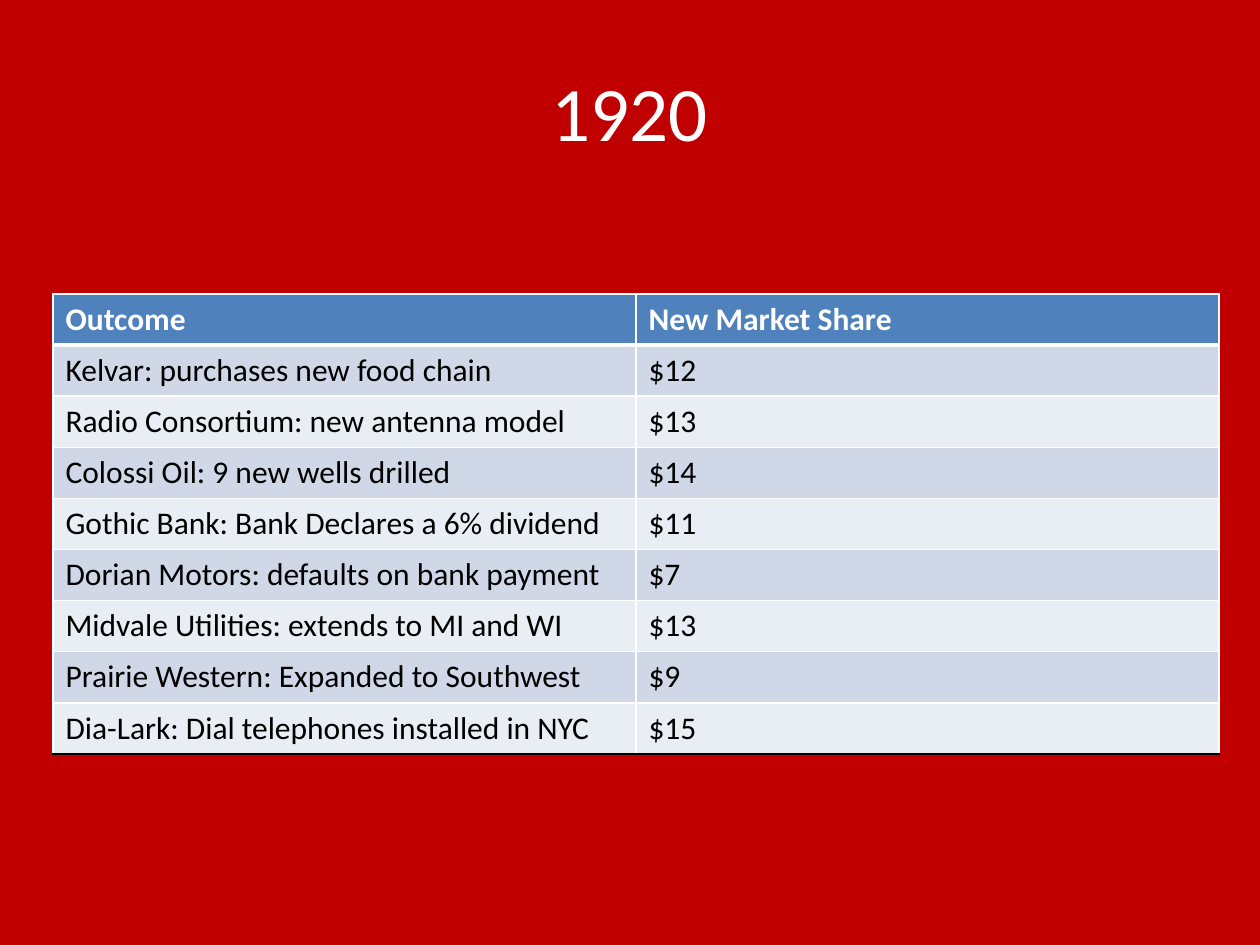
from dataclasses import dataclass
from typing import NamedTuple

from lxml import etree
from pptx import Presentation
from pptx import util as u
from pptx.dml.color import RGBColor
from pptx.enum import text
from pptx.oxml import ns

PX_PER_INCH = 126


@dataclass(frozen=True)
class Theme:
    font: str = "Calibri"
    title_size: int = 44
    table_size: int = 18
    background: str = "C00000"
    light: str = "FFFFFF"
    dark: str = "000000"
    header: str = "4F81BD"
    bands: tuple[str, str] = ("D0D8E8", "E9EDF4")


class Outcome(NamedTuple):
    event: str
    share: str


class Edge(NamedTuple):
    color: str
    points: int


THEME = Theme()
HEADINGS = Outcome("Outcome", "New Market Share")
OUTCOMES = [
    Outcome("Kelvar: purchases new food chain", "$12"),
    Outcome("Radio Consortium: new antenna model", "$13"),
    Outcome("Colossi Oil: 9 new wells drilled", "$14"),
    Outcome("Gothic Bank: Bank Declares a 6% dividend", "$11"),
    Outcome("Dorian Motors: defaults on bank payment", "$7"),
    Outcome("Midvale Utilities: extends to MI and WI", "$13"),
    Outcome("Prairie Western: Expanded to Southwest", "$9"),
    Outcome("Dia-Lark: Dial telephones installed in NYC", "$15"),
]


def px(length: int) -> u.Emu:
    return u.Inches(length / PX_PER_INCH)


def style_paragraph(paragraph, size: int, color: str, bold: bool = False) -> None:
    font = paragraph.font
    font.name, font.size, font.bold = THEME.font, u.Pt(size), bold
    font.color.rgb = RGBColor.from_string(color)


def set_borders(cell, top: Edge, bottom: Edge) -> None:
    """Draw the cell's edges; call before filling, as lines come first in tcPr."""
    side = Edge(THEME.light, 1)
    properties = cell._tc.get_or_add_tcPr()
    for tag, edge in (("lnL", side), ("lnR", side), ("lnT", top), ("lnB", bottom)):
        line = etree.SubElement(properties, ns.qn(f"a:{tag}"), w=str(u.Pt(edge.points)))
        fill = etree.SubElement(line, ns.qn("a:solidFill"))
        etree.SubElement(fill, ns.qn("a:srgbClr"), val=edge.color)


def add_title(slide, wording: str) -> None:
    title = slide.shapes.title
    title.left, title.top, title.width, title.height = map(px, (63, 32, 1134, 157))
    title.text_frame.text = wording
    title.text_frame.vertical_anchor = text.MSO_ANCHOR.MIDDLE
    heading = title.text_frame.paragraphs[0]
    heading.alignment = text.PP_ALIGN.CENTER
    style_paragraph(heading, THEME.title_size, THEME.light)


def add_outcomes(slide, left: int, top: int, column: int, row: int) -> None:
    lines = [HEADINGS, *OUTCOMES]
    columns = len(HEADINGS)
    table = slide.shapes.add_table(
        len(lines), columns, px(left), px(top), px(column * columns), px(row * len(lines))
    ).table
    thin, thick = Edge(THEME.light, 1), Edge(THEME.light, 3)
    closing = Edge(THEME.dark, 1)
    edges = [thin, thick, *[thin] * (len(OUTCOMES) - 1), closing]

    for r, line in enumerate(lines):
        is_header = r == 0
        fill = THEME.header if is_header else THEME.bands[(r - 1) % 2]
        color = THEME.light if is_header else THEME.dark
        for c, wording in enumerate(line):
            cell = table.cell(r, c)
            set_borders(cell, top=edges[r], bottom=edges[r + 1])
            cell.fill.solid()
            cell.fill.fore_color.rgb = RGBColor.from_string(fill)
            cell.text = wording
            style_paragraph(
                cell.text_frame.paragraphs[0], THEME.table_size, color, is_header
            )


def main() -> None:
    deck = Presentation()
    deck.slide_width, deck.slide_height = px(1260), px(945)
    slide = deck.slides.add_slide(deck.slide_layouts.get_by_name("Title Only"))
    slide.background.fill.solid()
    slide.background.fill.fore_color.rgb = RGBColor.from_string(THEME.background)
    add_title(slide, "1920")
    add_outcomes(slide, left=53, top=294, column=583, row=51)
    deck.save("out.pptx")


if __name__ == "__main__":
    main()
